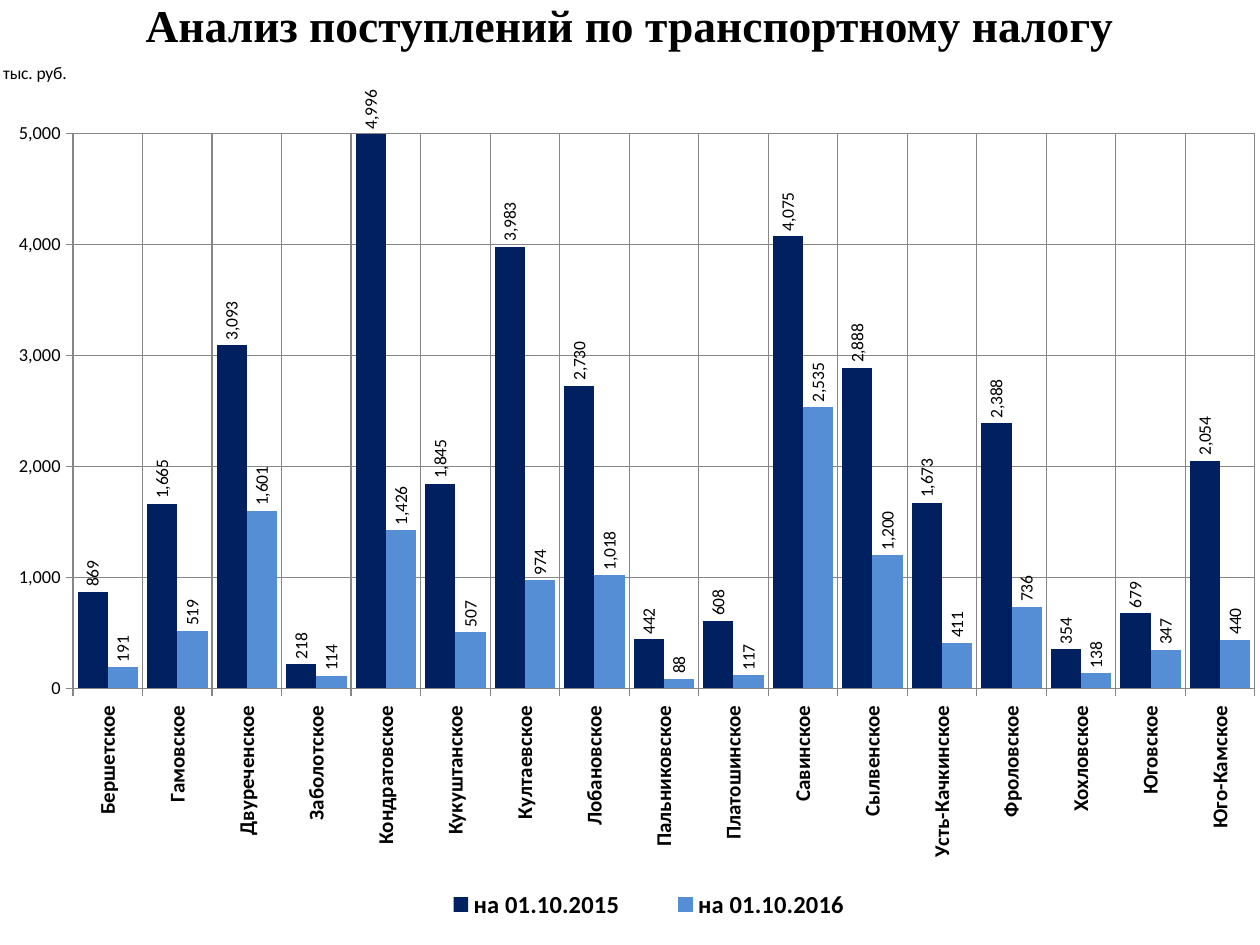
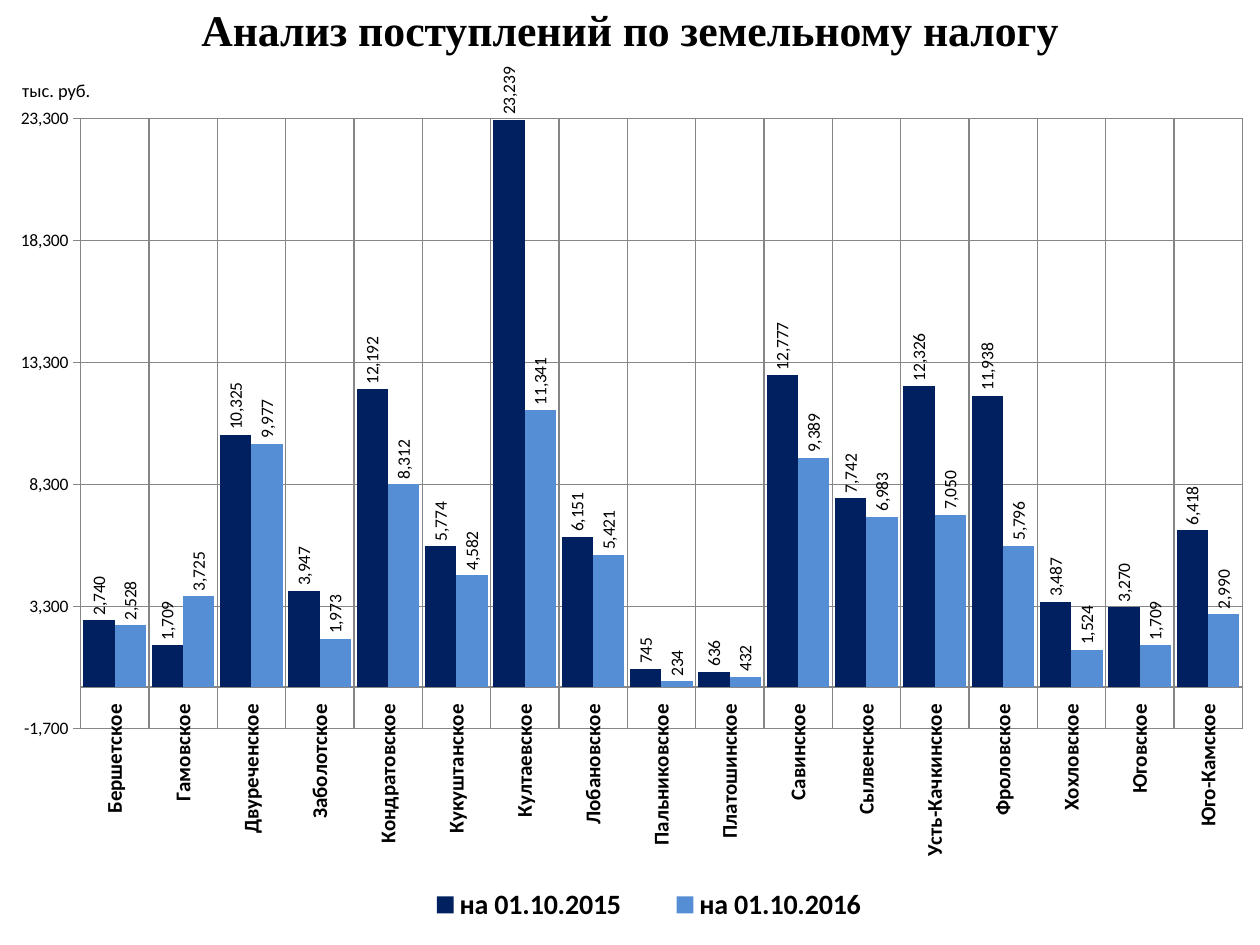
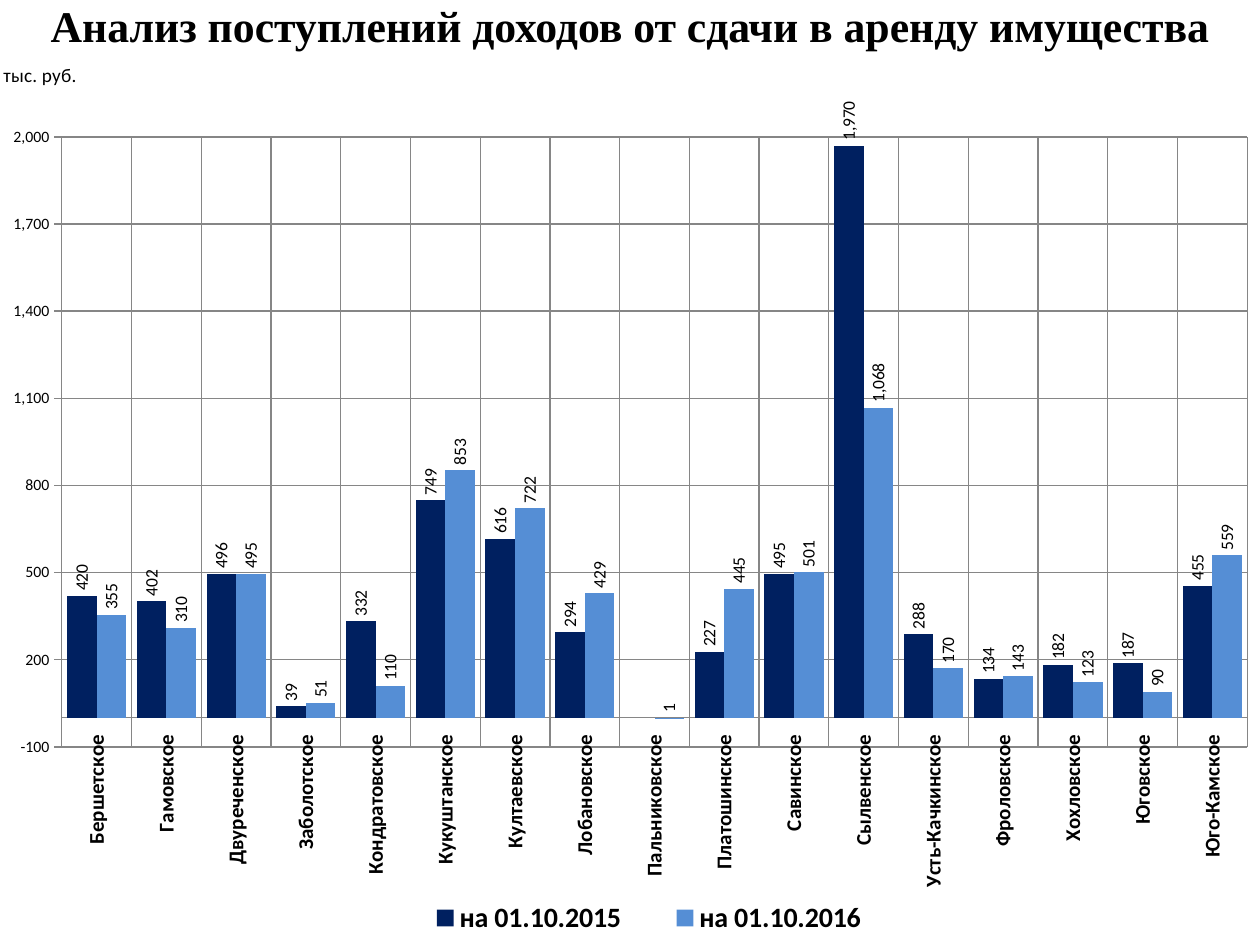
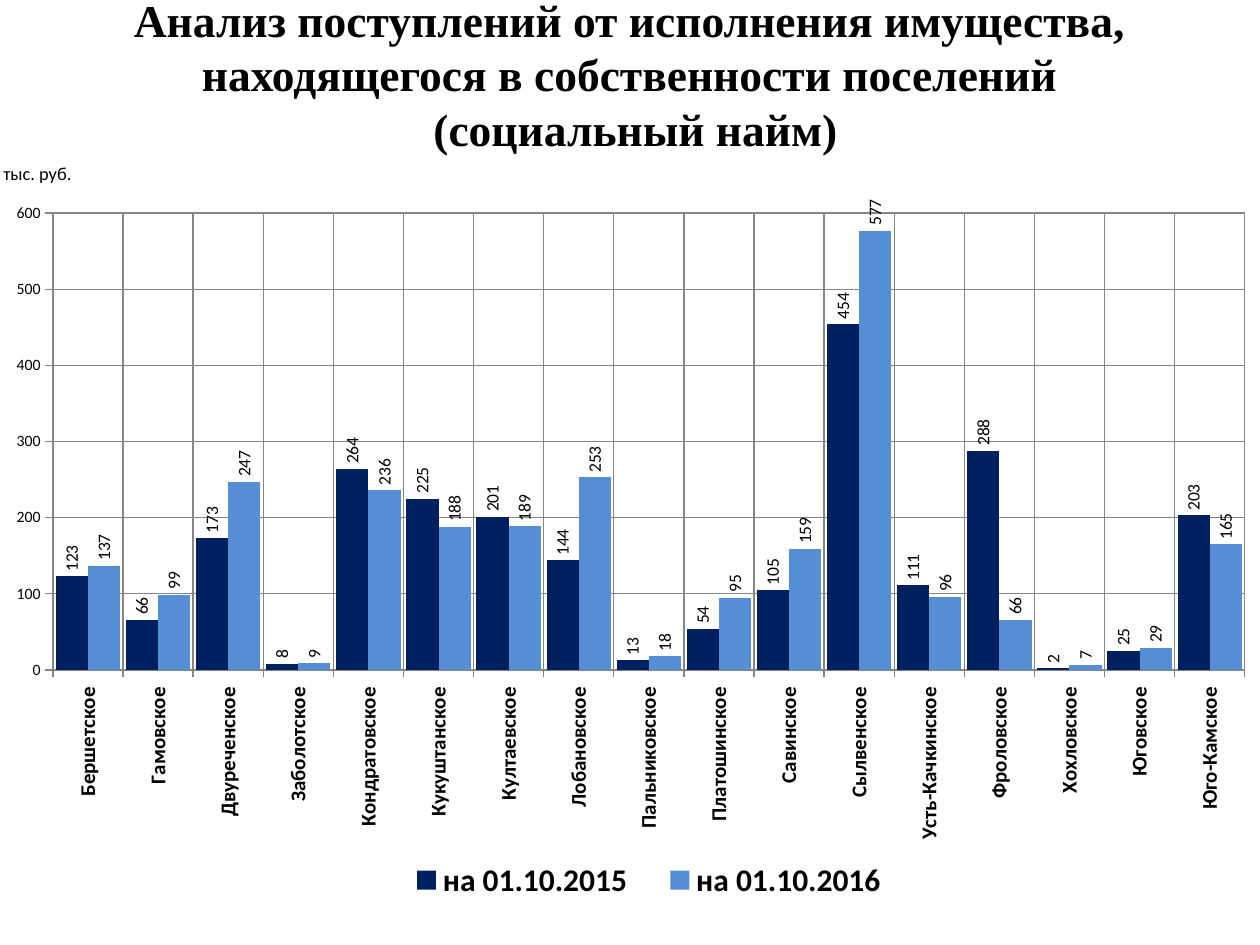
from lxml import etree
from pptx import Presentation, util as u
from pptx.chart.data import CategoryChartData
from pptx.dml.color import RGBColor
from pptx.enum import chart as ch, text
from pptx.oxml import ns

BLACK = RGBColor(0x00, 0x00, 0x00)
GRAY = RGBColor(0x86, 0x86, 0x86)
NAVY = RGBColor(0x00, 0x20, 0x60)
BLUE = RGBColor(0x55, 0x8E, 0xD5)

YEARS = (("на 01.10.2015", NAVY), ("на 01.10.2016", BLUE))
SETTLEMENTS = [name + " " for name in (
    "Бершетское Гамовское Двуреченское Заболотское Кондратовское Кукуштанское "
    "Култаевское Лобановское Пальниковское Платошинское Савинское Сылвенское "
    "Усть-Качкинское Фроловское Хохловское Юговское Юго-Камское").split()]

SLIDES = [
    dict(lines=["Анализ поступлений по транспортному налогу"],
         title_size=26, title_left=0.51, top=0.99, height=17.78,
         unit_size=10, unit_at=(0, 0.01), tick_size=10.5, legend_size=14,
         axis=(0, 5000, 1000), gap=30,
         plot=(0.058, 0.096, 0.938, 0.629), legend=(0.32, 0.945, 0.39, 0.05),
         values=([869, 1665, 3093, 218, 4996, 1845, 3983, 2730, 442,
                  608, 4075, 2888, 1673, 2388, 354, 679, 2054],
                 [191, 519, 1601, 114, 1426, 507, 974, 1018, 88,
                  117, 2535, 1200, 411, 736, 138, 347, 440])),
    dict(lines=["Анализ поступлений по земельному налогу"],
         title_size=25, title_left=0.51, top=1.19, height=17.58,
         unit_size=10.5, unit_at=(0.015, 0.018), tick_size=10, legend_size=16,
         axis=(-1700, 23300, 5000), gap=18,
         plot=(0.064, 0.068, 0.922, 0.7), legend=(0.31, 0.945, 0.41, 0.05),
         values=([2740, 1709, 10325, 3947, 12192, 5774, 23239, 6151, 745,
                  636, 12777, 7742, 12326, 11938, 3487, 3270, 6418],
                 [2528, 3725, 9977, 1973, 8312, 4582, 11341, 5421, 234,
                  432, 9389, 6983, 7050, 5796, 1524, 1709, 2990])),
    dict(lines=["Анализ поступлений доходов от сдачи в аренду имущества"],
         title_size=25, title_left=0.51, top=0.99, height=18.06,
         unit_size=11, unit_at=(0, 0.01), tick_size=9, legend_size=16,
         axis=(-100, 2000, 300), gap=36,
         plot=(0.049, 0.098, 0.941, 0.681), legend=(0.31, 0.945, 0.41, 0.05),
         values=([420, 402, 496, 39, 332, 749, 616, 294, None,
                  227, 495, 1970, 288, 134, 182, 187, 455],
                 [355, 310, 495, 51, 110, 853, 722, 429, 1,
                  445, 501, 1068, 170, 143, 123, 90, 559])),
    dict(lines=["Анализ поступлений от исполнения имущества, "
                "находящегося в собственности поселений", " (социальный найм)"],
         title_size=26, title_left=0, top=2.97, height=15.8,
         unit_size=10.5, unit_at=(0, 0.013), tick_size=9, legend_size=18,
         axis=(0, 600, 100), gap=18,
         plot=(0.042, 0.084, 0.946, 0.583), legend=(0.305, 0.91, 0.42, 0.05),
         values=([123, 66, 173, 8, 264, 225, 201, 144, 13,
                  54, 105, 454, 111, 288, 2, 25, 203],
                 [137, 99, 247, 9, 236, 188, 189, 253, 18,
                  95, 159, 577, 96, 66, 7, 29, 165])),
]


def set_layout(el, index, box, inner=False):
    for old in el.findall(ns.qn("c:layout")):
        el.remove(old)
    layout = etree.Element(ns.qn("c:layout"))
    el.insert(index, layout)
    manual = etree.SubElement(layout, ns.qn("c:manualLayout"))
    settings = [("layoutTarget", "inner")] if inner else []
    settings += [("xMode", "edge"), ("yMode", "edge")]
    settings += zip("xywh", box)
    for tag, val in settings:
        etree.SubElement(manual, ns.qn("c:" + tag)).set("val", str(val))


def set_font(font, size, bold=False):
    font.name = "Calibri"
    font.size = u.Pt(size)
    font.bold = bold
    font.color.rgb = BLACK


prs = Presentation()
prs.slide_width = u.Cm(25.4)
prs.slide_height = u.Cm(19.05)

for spec_row in SLIDES:
    s = prs.slides.add_slide(prs.slide_layouts[6])

    left = spec_row["title_left"]
    sp = s.shapes.add_textbox(u.Cm(left), 0, u.Cm(25.4 - 2 * left), u.Cm(spec_row["top"]))
    tf = sp.text_frame
    tf.word_wrap = True
    tf.margin_top = tf.margin_bottom = 0
    tf.vertical_anchor = text.MSO_ANCHOR.MIDDLE
    p = tf.paragraphs[0]
    p.alignment = text.PP_ALIGN.CENTER
    p.font.name = "Times New Roman"
    p.font.size = u.Pt(spec_row["title_size"])
    p.font.bold = True
    p.font.color.rgb = BLACK
    for i, line in enumerate(spec_row["lines"]):
        if i:
            p.add_line_break()
        p.add_run().text = line

    data = CategoryChartData(number_format="#,##0")
    data.categories = SETTLEMENTS
    for (year, color), values in zip(YEARS, spec_row["values"]):
        data.add_series(year, values)
    chart = s.shapes.add_chart(
        ch.XL_CHART_TYPE.COLUMN_CLUSTERED, 0, u.Cm(spec_row["top"]),
        u.Cm(25.4), u.Cm(spec_row["height"]), data).chart
    set_font(chart.font, 18)
    chart.has_title = False

    plot = chart.plots[0]
    plot.gap_width = spec_row["gap"]
    plot.overlap = 0
    plot.vary_by_categories = False
    for series, (year, color) in zip(plot.series, YEARS):
        series.format.fill.solid()
        series.format.fill.fore_color.rgb = color
        series.invert_if_negative = False
        labels = series.data_labels
        labels.show_value = True
        labels.number_format = "#,##0"
        labels.number_format_is_linked = False
        labels.position = ch.XL_LABEL_POSITION.OUTSIDE_END
        set_font(labels.font, 10)

    cat_axis, val_axis = chart.category_axis, chart.value_axis
    for axis, size, bold in ((cat_axis, 12, True), (val_axis, spec_row["tick_size"], False)):
        axis.has_major_gridlines = True
        axis.major_tick_mark = ch.XL_TICK_MARK.OUTSIDE
        axis.minor_tick_mark = ch.XL_TICK_MARK.NONE
        set_font(axis.tick_labels.font, size, bold)
        for line in (axis.format.line, axis.major_gridlines.format.line):
            line.color.rgb = GRAY
            line.width = u.Pt(0.75)
    val_axis.minimum_scale, val_axis.maximum_scale, val_axis.major_unit = spec_row["axis"]
    val_axis.tick_labels.number_format = "#,##0"
    val_axis.tick_labels.number_format_is_linked = False

    p = val_axis.axis_title.text_frame.paragraphs[0]
    p.add_run().text = "тыс. руб."
    set_font(p.font, spec_row["unit_size"])

    chart.has_legend = True
    chart.legend.position = ch.XL_LEGEND_POSITION.BOTTOM
    chart.legend.include_in_layout = False
    set_font(chart.legend.font, spec_row["legend_size"], True)

    root = chart.element
    set_layout(root.xpath(".//c:plotArea")[0], 0, spec_row["plot"], inner=True)
    set_layout(root.xpath(".//c:valAx/c:title")[0], 1, spec_row["unit_at"])
    set_layout(root.xpath(".//c:legend")[0], 1, spec_row["legend"])
    for query, angle in ((".//c:catAx/c:txPr/a:bodyPr", "-5400000"),
                         (".//c:dLbls/c:txPr/a:bodyPr", "-5400000"),
                         (".//c:valAx/c:title//a:bodyPr", "0")):
        for body in root.xpath(query):
            body.set("rot", angle)
            body.set("vert", "horz")

prs.save("out.pptx")
